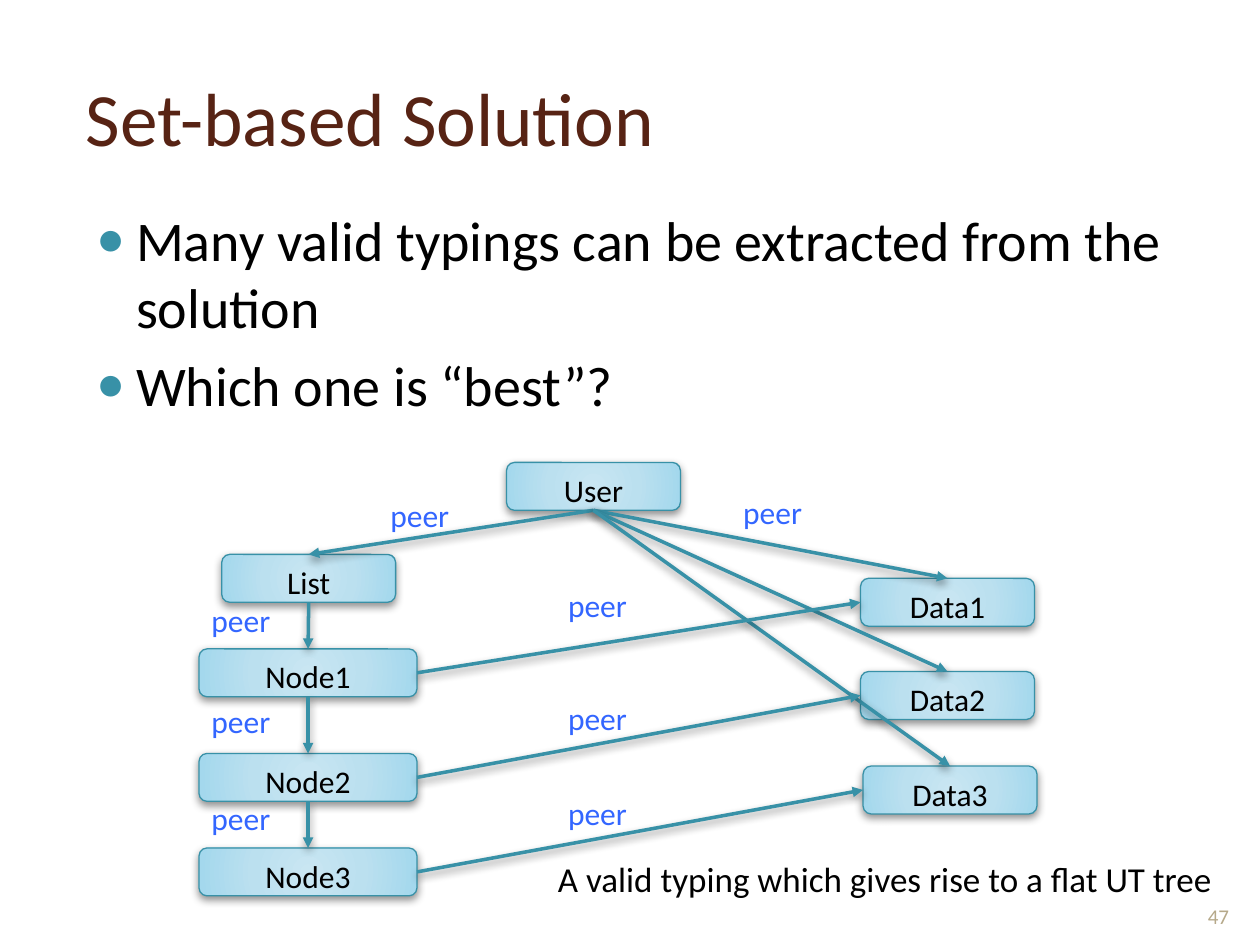
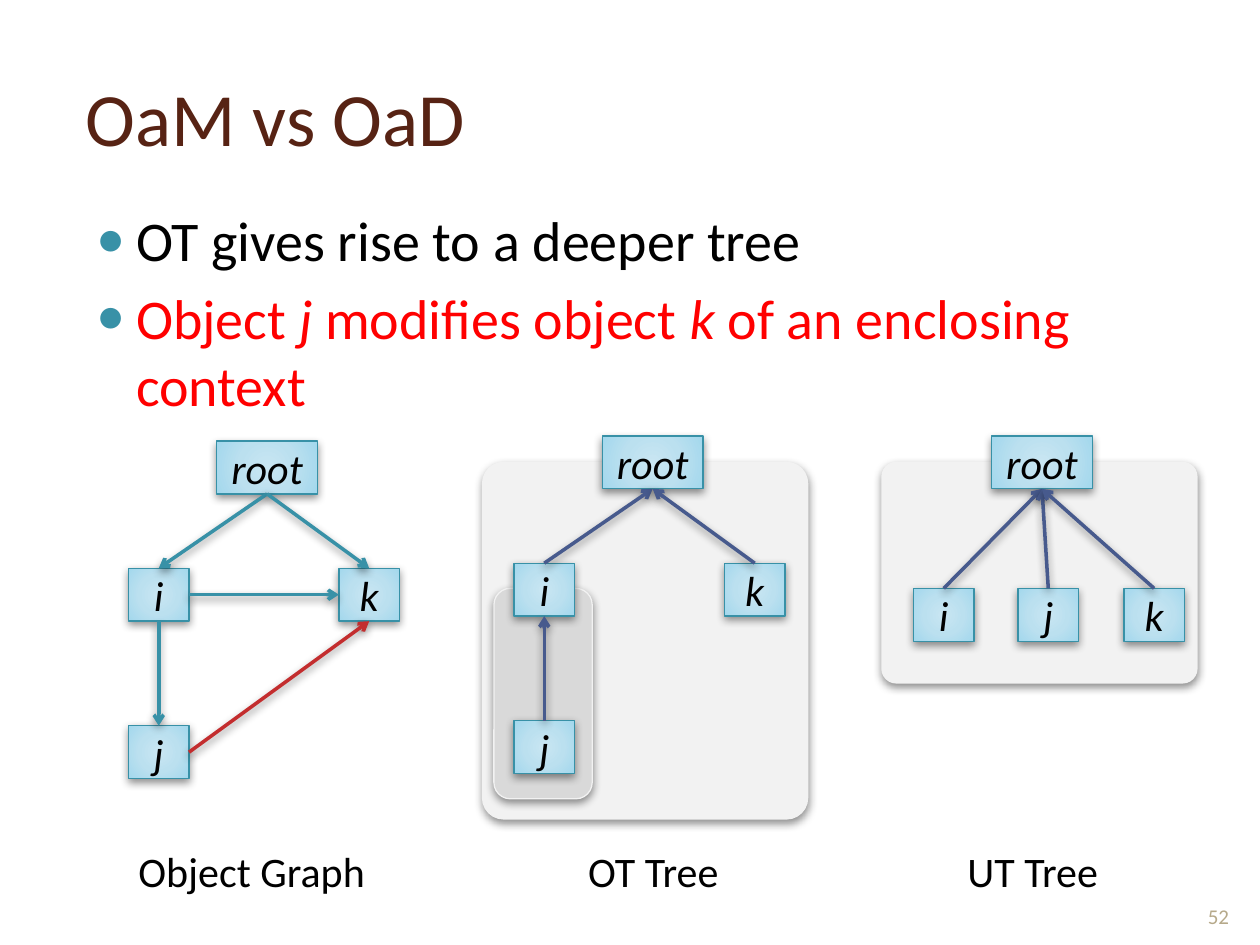
from pptx import Presentation
from pptx.dml.color import RGBColor
from pptx.enum.shapes import MSO_CONNECTOR as LINE, MSO_SHAPE as SHAPE
from pptx.enum.text import MSO_ANCHOR as ANCHOR, MSO_AUTO_SIZE as FIT, PP_ALIGN as ALIGN
from pptx.oxml import parse_xml
from pptx.oxml.ns import nsdecls, qn
from pptx.util import Inches, Pt

COLORS = {
    "title": "572314", "text": "000000", "alert": "FF0000", "label": "3366FF",
    "number": "B6A98A", "teal": "3891A7", "indigo": "475A8D", "red": "C32D2E",
    "panel": "F2F2F2", "inner": "D9D9D9",
}
RGB = {name: RGBColor.from_string(value) for name, value in COLORS.items()}
FONT = "Calibri"
NS = nsdecls("a")
TOP, LEFT, BOTTOM, RIGHT = range(4)

STOPS = [(0, "C9E6F2"), (50, "BBE0EF"), (97, "A4D8ED"), (100, "9BD7EE")]
GLOW = (
    f"<a:gradFill {NS}><a:gsLst>"
    + "".join(f'<a:gs pos="{pos * 1000}"><a:srgbClr val="{tint}"/></a:gs>' for pos, tint in STOPS)
    + '</a:gsLst><a:path path="circle">'
    '<a:fillToRect l="50000" t="50000" r="50000" b="50000"/></a:path></a:gradFill>'
)
SHADOW = (
    f'<a:effectLst {NS}><a:outerShdw blurRad="63500" dist="25400" dir="5400000" rotWithShape="0">'
    '<a:srgbClr val="000000"><a:alpha val="43000"/></a:srgbClr></a:outerShdw></a:effectLst>'
)
BULLET = [
    f'<a:buClr {NS}><a:srgbClr val="{COLORS["teal"]}"/></a:buClr>',
    f'<a:buSzPct {NS} val="80000"/>',
    f'<a:buFont {NS} typeface="{FONT}"/>',
    f'<a:buChar {NS} char="●"/>',
]


def add_box(slide, kind, at, fill=None, words="", size=18):
    box = slide.shapes.add_shape(kind, *map(Inches, at))
    props = box._element.spPr
    if fill:
        box.fill.solid()
        box.fill.fore_color.rgb = RGB[fill]
    else:
        props.find(qn("a:prstGeom")).addnext(parse_xml(GLOW))
    box.line.color.rgb = RGB["panel" if fill else "teal"]
    box.line.width = Pt(0.75)
    props.append(parse_xml(SHADOW))
    if words:
        frame = box.text_frame
        frame.vertical_anchor = ANCHOR.TOP if size == 18 else ANCHOR.MIDDLE
        para = frame.paragraphs[0]
        para.text = words
        para.alignment = ALIGN.CENTER
        para.font.name, para.font.size = FONT, Pt(size)
        para.font.italic = size == 24
        para.font.color.rgb = RGB["text"]
    return box


def add_arrow(slide, start, start_side, end, end_side, color="teal", head="arrow"):
    arrow = slide.shapes.add_connector(LINE.STRAIGHT, 0, 0, 0, 0)
    arrow.begin_connect(start, start_side)
    arrow.end_connect(end, end_side)
    arrow.line.color.rgb = RGB[color]
    arrow.line.width = Pt(2)
    props = arrow._element.spPr
    props.find(qn("a:ln")).append(parse_xml(f'<a:tailEnd {NS} type="{head}"/>'))
    props.append(parse_xml(SHADOW))


deck = Presentation()
deck.slide_width, deck.slide_height = Inches(10), Inches(7.5)

PAGES = [
    ("Set-based Solution", [
        ("text", "Many valid typings can be extracted from the solution"),
        ("text", "Which one is “best”?"),
    ]),
    ("OaM vs OaD", [
        ("text", "OT gives rise to a deeper tree"),
        ("alert", "Object *j* modifies object *k* of an enclosing context"),
    ]),
]
for heading, points in PAGES:
    slide = deck.slides.add_slide(deck.slide_layouts[1])
    title, body = slide.placeholders
    for holder, top, height in [(title, 0.3, 1.25), (body, 1.58, 5.25)]:
        holder.left, holder.top = Inches(0.58), Inches(top)
        holder.width, holder.height = Inches(8.87), Inches(height)
        holder.text_frame.auto_size = FIT.NONE
    title.text_frame.vertical_anchor = ANCHOR.MIDDLE
    head = title.text_frame.paragraphs[0]
    head.text = heading
    head.alignment = ALIGN.LEFT
    head.font.name, head.font.size = FONT, Pt(43)
    head.font.color.rgb = RGB["title"]

    for index, (color, point) in enumerate(points):
        para = body.text_frame.add_paragraph() if index else body.text_frame.paragraphs[0]
        para.space_before = Pt(6)
        props = para._p.get_or_add_pPr()
        props.set("marL", str(Inches(0.4)))
        props.set("indent", str(Inches(-0.31)))
        for part in BULLET:
            props.append(parse_xml(part))
        para.font.name, para.font.size = FONT, Pt(32)
        para.font.color.rgb = RGB[color]
        for order, piece in enumerate(point.split("*")):
            run = para.add_run()
            run.text = piece
            if order % 2:
                run.font.italic = True

solution, trees = deck.slides

objects = {}
for name, left, top, width in [
    ("User", 4.02, 3.67, 1.38), ("List", 1.76, 4.4, 1.38), ("Data1", 6.83, 4.59, 1.38),
    ("Node1", 1.58, 5.15, 1.73), ("Node2", 1.58, 5.98, 1.73), ("Node3", 1.58, 6.73, 1.73),
    ("Data2", 6.83, 5.33, 1.38), ("Data3", 6.85, 6.08, 1.38),
]:
    objects[name] = add_box(solution, SHAPE.ROUNDED_RECTANGLE, (left, top, width, 0.38), words=name)

downward = [("User", name) for name in ("List", "Data1", "Data2", "Data3")]
downward += [("List", "Node1"), ("Node1", "Node2"), ("Node2", "Node3")]
for source, target in downward:
    add_arrow(solution, objects[source], BOTTOM, objects[target], TOP, head="triangle")
for number in (1, 2, 3):
    add_arrow(solution, objects[f"Node{number}"], RIGHT, objects[f"Data{number}"], LEFT, head="triangle")

for at, fill, corner in [
    ((3.83, 3.67, 2.58, 2.83), "panel", 0.065),
    ((3.92, 4.67, 0.78, 1.67), "inner", 0.167),
    ((7, 3.67, 2.5, 1.75), "panel", 0.065),
]:
    add_box(trees, SHAPE.ROUNDED_RECTANGLE, at, fill).adjustments[0] = corner

GRAPHS = [
    {"root": (1.72, 3.5), "i": (1.02, 4.51), "k": (2.69, 4.51), "j": (1.02, 5.76)},
    {"root": (4.78, 3.46), "i": (4.08, 4.47), "k": (5.75, 4.47), "j": (4.08, 5.72)},
    {"root": (7.87, 3.46), "i": (7.25, 4.67), "k": (8.92, 4.67), "j": (8.08, 4.67)},
]
object_graph, ot_tree, ut_tree = [
    {
        name: add_box(trees, SHAPE.RECTANGLE, (*spot, 0.8 if name == "root" else 0.48, 0.42), words=name, size=24)
        for name, spot in graph.items()
    }
    for graph in GRAPHS
]
for source, source_side, target, target_side, color in [
    ("root", BOTTOM, "i", TOP, "teal"), ("i", BOTTOM, "j", TOP, "teal"),
    ("root", BOTTOM, "k", TOP, "teal"), ("j", RIGHT, "k", BOTTOM, "red"),
    ("i", RIGHT, "k", LEFT, "teal"),
]:
    add_arrow(trees, object_graph[source], source_side, object_graph[target], target_side, color)
for tree, child, parent in [
    (ot_tree, "i", "root"), (ot_tree, "j", "i"), (ot_tree, "k", "root"),
    (ut_tree, "i", "root"), (ut_tree, "j", "root"), (ut_tree, "k", "root"),
]:
    add_arrow(trees, tree[child], TOP, tree[parent], BOTTOM, "indigo")

PEERS = [(3, 3.89), (5.8, 3.86), (1.58, 4.72), (1.58, 5.52), (1.58, 6.29), (4.41, 4.6), (4.41, 5.5), (4.41, 6.25)]
labels = [(solution, "peer", (*spot, 0.72, 0.45), 18, "label") for spot in PEERS]
labels += [
    (solution, "A valid typing which gives rise to a flat UT tree", (4.33, 6.76, 5.5, 0.44), 20, "text"),
    (trees, "Object Graph", (1, 6.66, 2.1, 0.5), 24, "text"),
    (trees, "OT Tree", (4.57, 6.66, 1.76, 0.5), 24, "text"),
    (trees, "UT Tree", (7.58, 6.66, 1.76, 0.5), 24, "text"),
    (solution, "47", (9.42, 6.9, 0.5, 0.52), 12, "number"),
    (trees, "52", (9.42, 6.9, 0.5, 0.52), 12, "number"),
]
for slide, words, at, size, color in labels:
    frame = slide.shapes.add_textbox(*map(Inches, at)).text_frame
    frame.word_wrap = True
    para = frame.paragraphs[0]
    para.text = words
    para.font.name, para.font.size = FONT, Pt(size)
    para.font.color.rgb = RGB[color]
    if color == "number":
        frame.vertical_anchor = ANCHOR.BOTTOM
        para.alignment = ALIGN.CENTER

deck.save("out.pptx")
